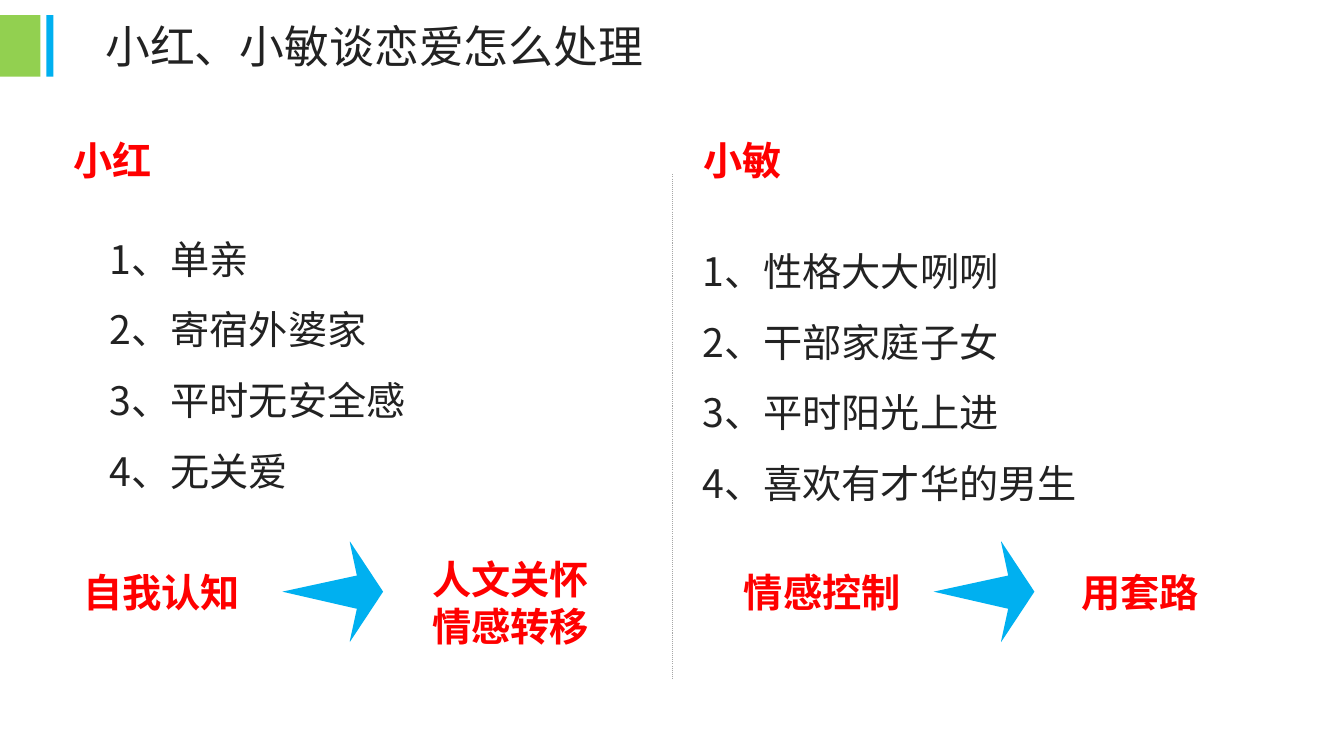
from pptx import Presentation
from pptx.dml.color import RGBColor
from pptx.enum.dml import MSO_LINE
from pptx.enum.shapes import MSO_CONNECTOR, MSO_SHAPE
from pptx.enum.text import MSO_ANCHOR, MSO_AUTO_SIZE, PP_ALIGN
from pptx.oxml.ns import qn
from pptx.util import Pt
from lxml.etree import SubElement

PX = 9144  # 100 px to the inch
INK = RGBColor(0x22, 0x22, 0x22)
RED = RGBColor(0xFF, 0x00, 0x00)
GREEN = RGBColor(0x92, 0xD0, 0x50)
BLUE = RGBColor(0x00, 0xB0, 0xF0)
GREY = RGBColor(0xA6, 0xA6, 0xA6)
CJK = "Noto Sans CJK SC"

TITLE = dict(font=dict(name=CJK, size=Pt(32), bold=False), color=INK,
             para=dict(alignment=PP_ALIGN.CENTER, space_before=Pt(10.6)),
             frame=dict(vertical_anchor=MSO_ANCHOR.MIDDLE,
                        auto_size=MSO_AUTO_SIZE.NONE))
GROW = dict(auto_size=MSO_AUTO_SIZE.SHAPE_TO_FIT_TEXT)
NO_INSET = dict.fromkeys(
    ("margin_left", "margin_top", "margin_right", "margin_bottom"), 0)
LIST = dict(font=dict(name=CJK, size=Pt(28)), color=INK,
            para=dict(line_spacing=1.5), frame=GROW)
NAME = dict(font=dict(name="Arial", size=Pt(28), bold=True), color=RED,
            para={}, frame=GROW | NO_INSET)
STEP = dict(font=dict(name="Calibri", size=Pt(28), bold=True), color=RED,
            para={}, frame=GROW)

ARROW = [(67, 0), (100, 50), (67, 100), (67, 99), (74, 67), (0, 50),
         (74, 34), (67, 1)]


def apply(target, values):
    for key, value in values.items():
        setattr(target, key, value)


class Deck:
    """Holds the presentation and the slide being drawn."""

    def __init__(self, width, height):
        self.prs = Presentation()
        self.prs.slide_width, self.prs.slide_height = width * PX, height * PX
        self.s = self.prs.slides.add_slide(self.prs.slide_layouts[5])

    def fill_text(self, sp, lines, style):
        tf = sp.text_frame
        apply(tf, dict(word_wrap=True) | style["frame"])
        for i, line in enumerate(lines):
            p = tf.add_paragraph() if i else tf.paragraphs[0]
            apply(p, style["para"])
            r = p.add_run()
            r.text = line
            apply(r.font, style["font"])
            r.font.color.rgb = style["color"]
            SubElement(r.font._element, qn("a:ea")).set("typeface", CJK)

    def title(self, x, y, w, h, text):
        sp = self.s.shapes.title
        apply(sp, dict(left=x * PX, top=y * PX, width=w * PX, height=h * PX))
        self.fill_text(sp, [text], TITLE)

    def text(self, x, y, w, h, lines, style):
        sp = self.s.shapes.add_textbox(x * PX, y * PX, w * PX, h * PX)
        self.fill_text(sp, lines, style)

    def paint(self, sp, color):
        sp.shadow.inherit = False
        sp.fill.solid()
        sp.fill.fore_color.rgb = color
        sp.line.fill.background()

    def bar(self, x, y, w, h, color):
        self.paint(self.s.shapes.add_shape(
            MSO_SHAPE.RECTANGLE, x * PX, y * PX, w * PX, h * PX), color)

    def arrow(self, x, y):
        start, *rest = [(x + dx, y + dy) for dx, dy in ARROW]
        fb = self.s.shapes.build_freeform(*start, scale=PX)
        fb.add_line_segments(rest, close=True)
        self.paint(fb.convert_to_shape(), BLUE)

    def divider(self, x, top, bottom):
        line = self.s.shapes.add_connector(
            MSO_CONNECTOR.STRAIGHT, x * PX, top * PX, x * PX, bottom * PX)
        line.line.color.rgb = GREY
        apply(line.line, dict(width=Pt(0.75), dash_style=MSO_LINE.ROUND_DOT))
        SubElement(line._element.spPr, qn("a:effectLst"))


def main():
    deck = Deck(1333, 750)
    deck.title(56, 15, 631, 61, "小红、小敏谈恋爱怎么处理")
    deck.bar(0, 15, 40, 61, GREEN)
    deck.bar(46, 15, 7, 61, BLUE)
    deck.divider(667, 173, 673)

    deck.text(73, 135, 553, 47, ["小红"], NAME)
    deck.text(698, 135, 600, 47, ["小敏"], NAME)
    deck.text(99, 205, 440, 293,
              ["1、单亲", "2、寄宿外婆家", "3、平时无安全感", "4、无关爱"], LIST)
    deck.text(687, 217, 600, 293,
              ["1、性格大大咧咧", "2、干部家庭子女", "3、平时阳光上进",
               "4、喜欢有才华的男生"], LIST)

    for x, y, w, h, step in [(73, 559, 193, 57, "自我认知"),
                             (419, 546, 182, 104, "人文关怀情感转移"),
                             (728, 559, 180, 57, "情感控制"),
                             (1063, 559, 152, 57, "用套路")]:
        deck.text(x, y, w, h, [step], STEP)
    for x in (280, 926):
        deck.arrow(x, 537)

    deck.prs.save("out.pptx")


if __name__ == "__main__":
    main()
